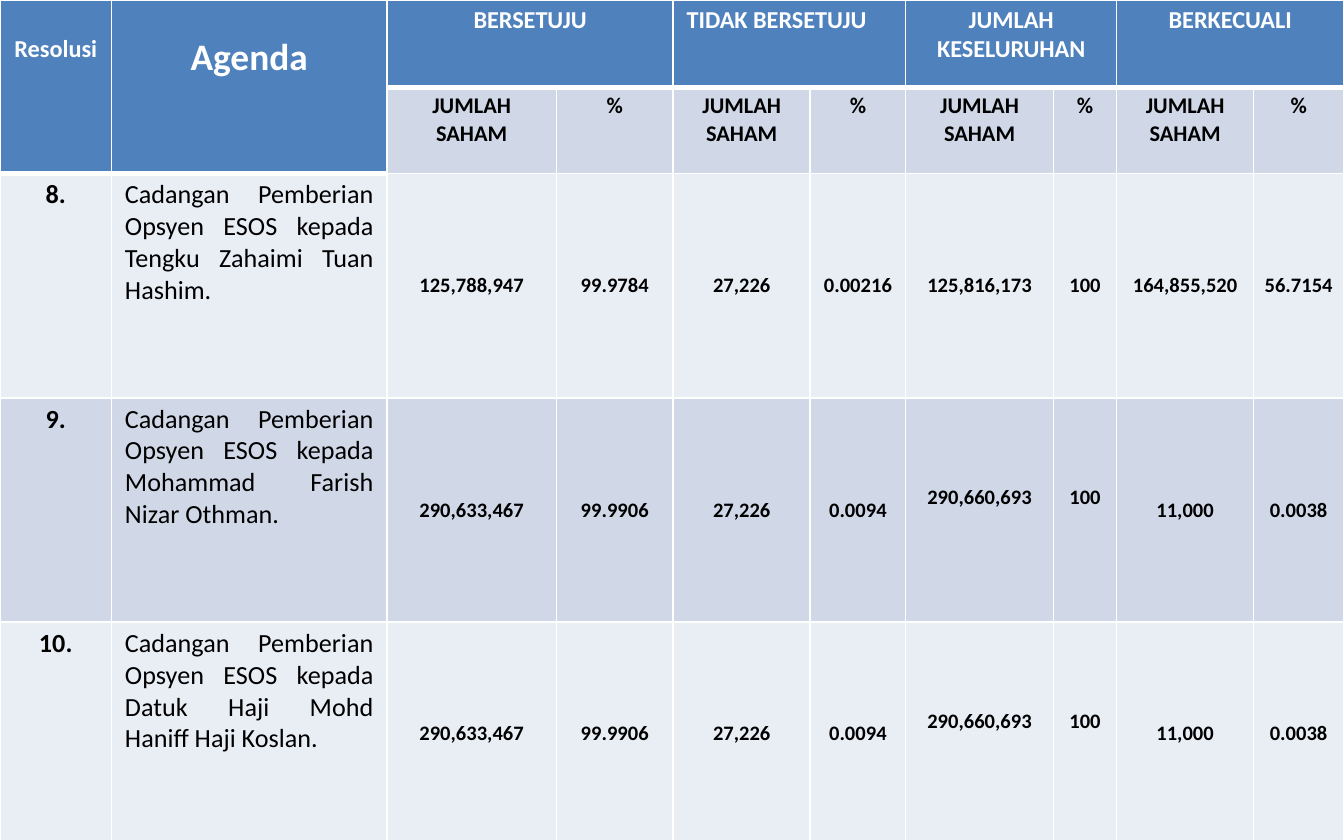
from lxml import etree
from pptx import Presentation
from pptx.dml.color import RGBColor
from pptx.enum.text import MSO_ANCHOR, PP_ALIGN
from pptx.oxml.ns import qn
from pptx.util import Inches, Pt

CENTER, JUSTIFY, LEFT = PP_ALIGN.CENTER, PP_ALIGN.JUSTIFY, PP_ALIGN.LEFT
TOP, MIDDLE = MSO_ANCHOR.TOP, MSO_ANCHOR.MIDDLE
FONT = "Calibri"
BLUE, DARK_BAND, LIGHT_BAND = "4F81BD", "D0D8E8", "E9EDF4"
WHITE, BLACK = "FFFFFF", "000000"

COLUMN_WIDTHS = [0.83, 2.05, 1.26, 0.87, 1.02, 0.71, 1.1, 0.47, 1.02, 0.67]
ROW_HEIGHTS = [0.65, 0.6, 1.67, 1.67, 1.66]
TITLES = [("Resolusi", 13), ("Agenda", 20)]
GROUPS = [
    ("BERSETUJU", CENTER),
    ("TIDAK BERSETUJU", LEFT),
    ("JUMLAH KESELURUHAN", CENTER),
    ("BERKECUALI", CENTER),
]
RESOLUTIONS = [
    ("8.", "Cadangan Pemberian Opsyen ESOS kepada Tengku Zahaimi Tuan Hashim.",
     ["125,788,947", "99.9784", "27,226", "0.00216",
      "125,816,173", "100", "164,855,520", "56.7154"]),
    ("9.", "Cadangan Pemberian Opsyen ESOS kepada Mohammad Farish Nizar Othman.",
     ["290,633,467", "99.9906", "27,226", "0.0094",
      "290,660,693", "100", "11,000", "0.0038"]),
    ("10.", "Cadangan Pemberian Opsyen ESOS kepada Datuk Haji Mohd Haniff Haji Koslan.",
     ["290,633,467", "99.9906", "27,226", "0.0094",
      "290,660,693", "100", "11,000", "0.0038"]),
]
TOTAL_COLUMNS = (6, 7)


def color(value):
    return RGBColor.from_string(value)


def edge_width(row, column):
    return 3 if row == 0 or (row == 1 and column < 2) else 1


def set_borders(cell, row, column):
    properties = cell._tc.get_or_add_tcPr()
    widths = {
        "a:lnL": 1,
        "a:lnR": 1,
        "a:lnT": edge_width(row - 1, column),
        "a:lnB": edge_width(row, column),
    }
    for position, (tag, width) in enumerate(widths.items()):
        line = etree.Element(qn(tag), w=str(Pt(width)))
        fill = etree.SubElement(line, qn("a:solidFill"))
        etree.SubElement(fill, qn("a:srgbClr"), val=WHITE)
        properties.insert(position, line)


def set_margins(cell, side, top, bottom):
    cell.margin_left = cell.margin_right = Inches(side)
    cell.margin_top, cell.margin_bottom = Inches(top), Inches(bottom)


def write_cell(cell, text, size, text_color=BLACK, bold=True,
               alignment=CENTER, anchor=TOP):
    cell.text = text
    cell.vertical_anchor = anchor
    paragraph = cell.text_frame.paragraphs[0]
    paragraph.alignment = alignment
    font = paragraph.font
    font.name, font.size, font.bold = FONT, Pt(size), bold
    font.color.rgb = color(text_color)


def add_results_table(slide):
    shape = slide.shapes.add_table(
        len(ROW_HEIGHTS), len(COLUMN_WIDTHS), 0, 0, Inches(10), Inches(6.25))
    table = shape.table
    for column, width in zip(table.columns, COLUMN_WIDTHS):
        column.width = Inches(width)
    for row, height in zip(table.rows, ROW_HEIGHTS):
        row.height = Inches(height)
    fills = [BLUE, DARK_BAND, LIGHT_BAND, DARK_BAND, LIGHT_BAND]
    for row, row_fill in enumerate(fills):
        for column in range(len(COLUMN_WIDTHS)):
            cell = table.cell(row, column)
            set_margins(cell, 0.1, 0.04, 0.04)
            cell.fill.solid()
            cell.fill.fore_color.rgb = color(
                BLUE if row < 2 and column < 2 else row_fill)
            set_borders(cell, row, column)
    return table


def write_headers(table):
    for column, (title, size) in enumerate(TITLES):
        cell = table.cell(0, column)
        cell.merge(table.cell(1, column))
        set_margins(cell, 0.1, 0.26, 0.04)
        write_cell(cell, title, size, WHITE)
    for index, (group, alignment) in enumerate(GROUPS):
        column = 2 + 2 * index
        cell = table.cell(0, column)
        cell.merge(table.cell(0, column + 1))
        write_cell(cell, group, 13, WHITE, alignment=alignment)
        write_cell(table.cell(1, column), "JUMLAH SAHAM", 12)
        write_cell(table.cell(1, column + 1), "%", 12)


def write_resolutions(table):
    for row, (number, agenda, votes) in enumerate(RESOLUTIONS, 2):
        write_cell(table.cell(row, 0), number, 14)
        write_cell(table.cell(row, 1), agenda, 14, bold=False, alignment=JUSTIFY)
        for column, vote in enumerate(votes, 2):
            cell = table.cell(row, column)
            raised = row > 2 and column in TOTAL_COLUMNS
            set_margins(cell, 0.07, 0, 0.19 if raised else 0)
            write_cell(cell, vote, 11, anchor=MIDDLE)


def main():
    presentation = Presentation()
    presentation.slide_width = Inches(10)
    presentation.slide_height = Inches(6.25)
    slide = presentation.slides.add_slide(presentation.slide_layouts[6])
    table = add_results_table(slide)
    write_headers(table)
    write_resolutions(table)
    presentation.save("out.pptx")


if __name__ == "__main__":
    main()
